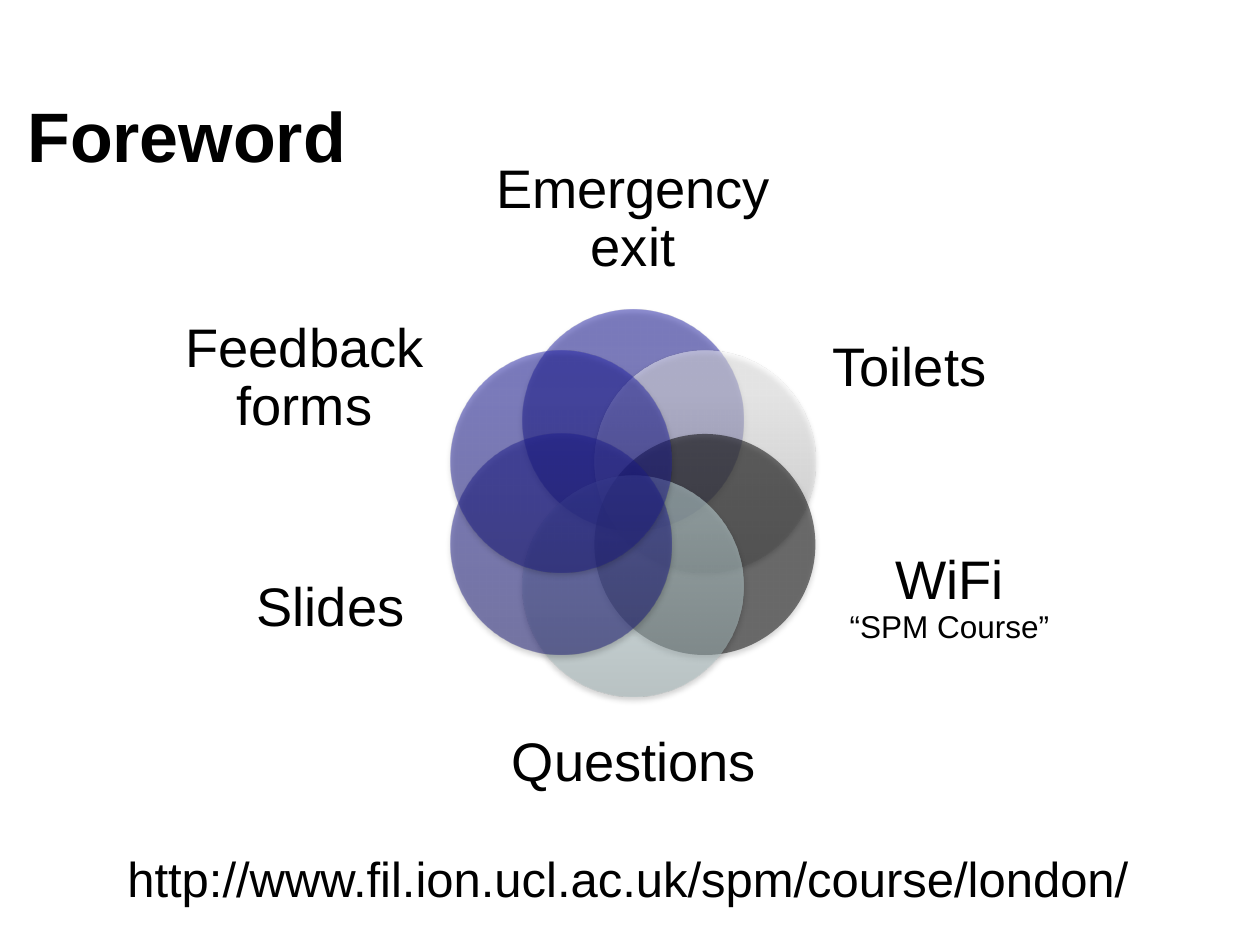
import math
from lxml import etree
from pptx import Presentation, util as u
from pptx.dml.color import RGBColor
from pptx.enum import shapes, text
from pptx.oxml.ns import nsdecls

BLACK = RGBColor(0x00, 0x00, 0x00)
FONT = "Arial"
EMU_PER_PX = 914400 / 126

INDIGO = ("1B1B7E", "2323A3", "2020A6")
NAVY = ("171771", "1E1E93", "1C1C96")
SILVER = ("BEBEBE", "F7F7F7", "F8F8F8")
TEAL = ("A0B3B5", "D0E8EB", "D1EAEC")
SOLID = ("000000",)
STOPS = (0, 80, 100)

# Clockwise from the top: label runs (one per line), label box, petal colours
PETALS = [
    ([("Emergency exit", 31)], (495, 145, 276, 150), INDIGO),
    ([("Toilets", 31)], (779, 287, 261, 164), SILVER),
    ([("WiFi", 31), ("“SPM Course”", 18)], (799, 507, 301, 184), SOLID),
    ([("Questions", 31)], (496, 689, 276, 150), TEAL),
    ([("Slides", 31)], (200, 517, 261, 184), NAVY),
    ([("Feedback forms", 31)], (174, 287, 261, 184), INDIGO),
]
CENTER_X, CENTER_Y, ORBIT, DIAMETER = 633, 503, 83, 221


def px(*values):
    return [u.Emu(round(v * EMU_PER_PX)) for v in values]


def color_xml(rgb, opacity):
    return f'<a:srgbClr val="{rgb}"><a:alpha val="{opacity * 1000}"/></a:srgbClr>'


def fill_xml(colors):
    """Half-transparent fill: solid for one colour, else a bottom-to-top gradient."""
    ns = nsdecls("a")
    if len(colors) == 1:
        return f"<a:solidFill {ns}>{color_xml(colors[0], 50)}</a:solidFill>"
    stops = "".join(f'<a:gs pos="{pos * 1000}">{color_xml(rgb, 50)}</a:gs>'
                    for pos, rgb in zip(STOPS, colors))
    return (f'<a:gradFill {ns} rotWithShape="1"><a:gsLst>{stops}</a:gsLst>'
            f'<a:lin ang="16200000" scaled="0"/></a:gradFill>')


SHADOW_XML = (f'<a:effectLst {nsdecls("a")}><a:outerShdw blurRad="40000" dist="23000" '
              f'dir="5400000" rotWithShape="0">{color_xml("000000", 35)}'
              f'</a:outerShdw></a:effectLst>')


def add_petal(s, angle, colors):
    left = CENTER_X + ORBIT * math.sin(angle) - DIAMETER / 2
    top = CENTER_Y - ORBIT * math.cos(angle) - DIAMETER / 2
    sp = s.shapes.add_shape(shapes.MSO_SHAPE.OVAL, *px(left, top, DIAMETER, DIAMETER))
    sp_pr = sp._element.spPr
    sp_pr.append(etree.fromstring(fill_xml(colors)))
    sp.line.fill.background()
    sp_pr.append(etree.fromstring(SHADOW_XML))


def add_text(s, box, runs, bold=False, wrap=True):
    tf = s.shapes.add_textbox(*px(*box)).text_frame
    tf.word_wrap = wrap
    p = tf.paragraphs[0]
    p.font.name, p.font.bold = FONT, bold
    p.font.color.rgb = BLACK
    for i, (words, size) in enumerate(runs):
        if i:
            p.add_line_break()
        r = p.add_run()
        r.text, r.font.size = words, u.Pt(size)
    return tf


def add_label(s, box, runs):
    tf = add_text(s, box, runs)
    tf.margin_left = tf.margin_right = tf.margin_top = tf.margin_bottom = 0
    tf.vertical_anchor = text.MSO_ANCHOR.MIDDLE
    p = tf.paragraphs[0]
    p.alignment, p.line_spacing = text.PP_ALIGN.CENTER, 0.9


def main():
    prs = Presentation()
    prs.slide_width, prs.slide_height = px(1260, 945)
    s = prs.slides.add_slide(prs.slide_layouts[6])
    add_text(s, (15, 86, 1134, 97), [("Foreword", 40)], bold=True)
    for i, (runs, box, colors) in enumerate(PETALS):
        add_petal(s, math.tau * i / len(PETALS), colors)
        add_label(s, box, runs)
    url = add_text(s, (115, 842, 1038, 72),
                   [("http://www.fil.ion.ucl.ac.uk/spm/course/london/", 28)], wrap=False)
    url.auto_size = text.MSO_AUTO_SIZE.SHAPE_TO_FIT_TEXT
    prs.save("out.pptx")


if __name__ == "__main__":
    main()
